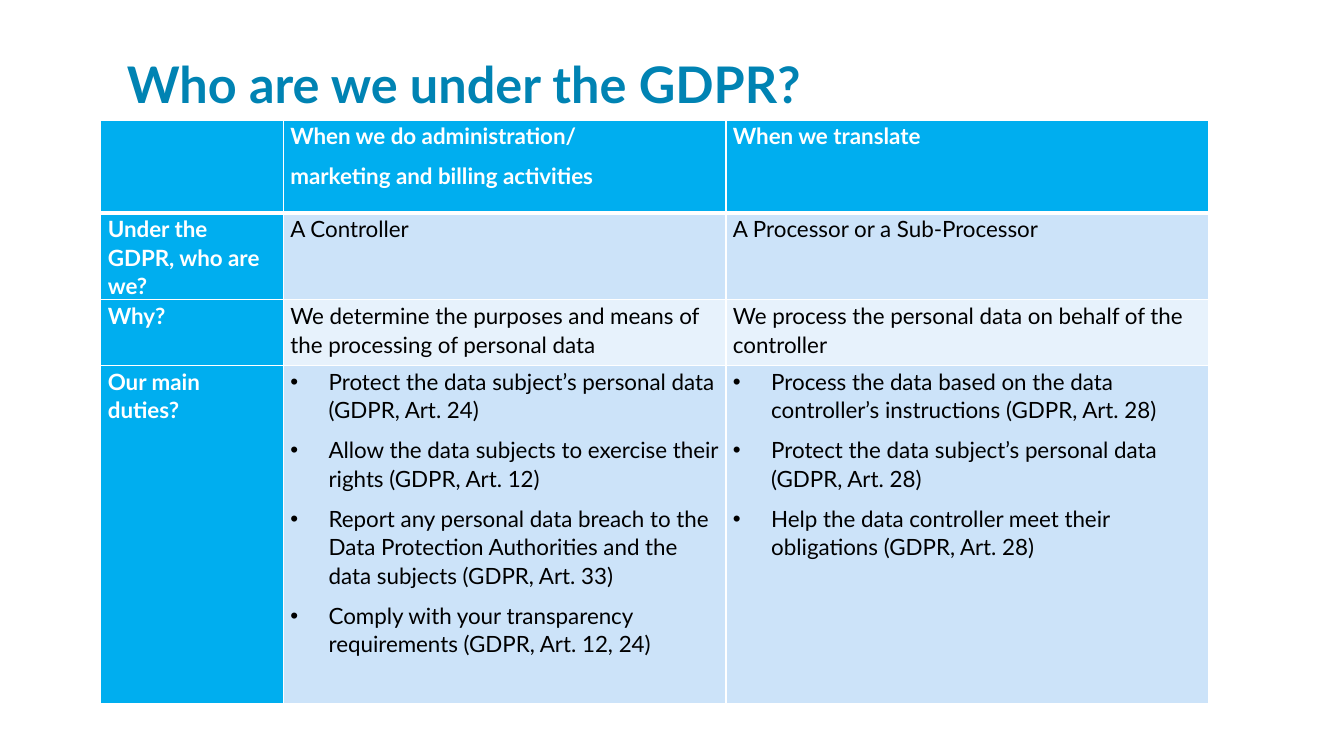
from dataclasses import dataclass

from lxml.etree import SubElement
from pptx import Presentation
from pptx.dml.color import RGBColor
from pptx.enum.text import MSO_ANCHOR
from pptx.oxml.ns import qn
from pptx.util import Inches, Pt


@dataclass(frozen=True)
class Theme:
    font: str = "Lato"
    title_size: int = 36
    body_size: int = 16
    title: str = "0083B3"
    accent: str = "00AEEF"
    bands: tuple = ("CCE3F9", "E7F2FC")
    light: str = "FFFFFF"
    dark: str = "000000"
    thin: int = 1
    thick: int = 3


def apply(target, values):
    for name, value in values.items():
        setattr(target, name, value)


class SlideBuilder:
    def __init__(self, slide, theme):
        self.slide = slide
        self.theme = theme

    def add_run(self, paragraph, text, size, color, bold):
        run = paragraph.add_run()
        run.text = text
        apply(run.font, {"name": self.theme.font, "size": Pt(size), "bold": bold})
        run.font.color.rgb = RGBColor.from_string(color)

    def add_title(self, text, left, top, width, height):
        box = self.slide.shapes.add_textbox(
            Inches(left), Inches(top), Inches(width), Inches(height))
        frame = box.text_frame
        apply(frame, {"word_wrap": True, "vertical_anchor": MSO_ANCHOR.BOTTOM})
        heading = frame.paragraphs[0]
        heading.line_spacing = 0.8
        self.add_run(heading, text, self.theme.title_size, self.theme.title, True)

    def add_bullet(self, paragraph):
        properties = paragraph._p.get_or_add_pPr()
        properties.set("marL", str(Inches(0.38)))
        properties.set("indent", str(-Inches(0.38)))
        SubElement(properties, qn("a:buFont"), typeface="Arial")
        SubElement(properties, qn("a:buChar"), char="•")
        tabs = SubElement(properties, qn("a:tabLst"))
        SubElement(tabs, qn("a:tab"), pos=str(Inches(0.5)), algn="l")

    def add_borders(self, cell, widths):
        """Draw the cell edges; widths are in points, keyed L, R, T, B in that order."""
        properties = cell._tc.get_or_add_tcPr()
        for side, width in widths.items():
            line = SubElement(properties, qn(f"a:ln{side}"), w=str(Pt(width)))
            fill = SubElement(line, qn("a:solidFill"))
            SubElement(fill, qn("a:srgbClr"), val=self.theme.light)

    def fill_cell(self, cell, lines, row, column):
        theme = self.theme
        is_heading = row == 0 or column == 0
        apply(cell, {"margin_left": Inches(0.07), "margin_right": Inches(0.07),
                     "margin_top": Inches(0.01), "margin_bottom": 0})
        self.add_borders(cell, {
            "L": theme.thin, "R": theme.thin,
            "T": theme.thick if row == 1 else theme.thin,
            "B": theme.thick if row == 0 else theme.thin})
        cell.fill.solid()
        band = theme.accent if is_heading else theme.bands[(row - 1) % 2]
        cell.fill.fore_color.rgb = RGBColor.from_string(band)
        frame = cell.text_frame
        for index, line in enumerate(lines):
            paragraph = frame.add_paragraph() if index else frame.paragraphs[0]
            if len(lines) > 1 and not is_heading:
                self.add_bullet(paragraph)
            apply(paragraph, {"line_spacing": 1.07, "space_after": Pt(8)})
            self.add_run(paragraph, line, theme.body_size,
                         theme.light if is_heading else theme.dark, is_heading)

    def add_table(self, rows, left, top, column_widths, row_heights):
        table = self.slide.shapes.add_table(
            len(rows), len(column_widths), Inches(left), Inches(top),
            Inches(sum(column_widths)), Inches(sum(row_heights))).table
        for column, width in zip(table.columns, column_widths):
            column.width = Inches(width)
        for row, height in zip(table.rows, row_heights):
            row.height = Inches(height)
        for r, row in enumerate(rows):
            for c, lines in enumerate(row):
                self.fill_cell(table.cell(r, c), lines, r, c)


ROLES = [
    [[],
     ["When we do administration/", "marketing and billing activities"],
     ["When we translate"]],
    [["Under the GDPR, who are we?"],
     ["A Controller"],
     ["A Processor or a Sub-Processor"]],
    [["Why?"],
     ["We determine the purposes and means of the processing of personal data"],
     ["We process the personal data on behalf of the controller"]],
    [["Our main duties?"],
     ["Protect the data subject’s personal data (GDPR, Art. 24)",
      "Allow the data subjects to exercise their rights (GDPR, Art. 12)",
      "Report any personal data breach to the Data Protection Authorities "
      "and the data subjects (GDPR, Art. 33)",
      "Comply with your transparency requirements (GDPR, Art. 12, 24)"],
     ["Process the data based on the data controller’s instructions (GDPR, Art. 28)",
      "Protect the data subject’s personal data (GDPR, Art. 28)",
      "Help the data controller meet their obligations (GDPR, Art. 28)"]],
]


def main():
    presentation = Presentation()
    apply(presentation, {"slide_width": Inches(13.33), "slide_height": Inches(7.5)})
    slide = presentation.slides.add_slide(presentation.slide_layouts[6])
    builder = SlideBuilder(slide, Theme())
    builder.add_title("Who are we under the GDPR?", 1.16, 0.42, 9.5, 0.75)
    builder.add_table(ROLES, 1, 1.19, [1.81, 4.39, 4.79], [0.92, 0.65, 0.65, 3.36])
    presentation.save("out.pptx")


if __name__ == "__main__":
    main()
